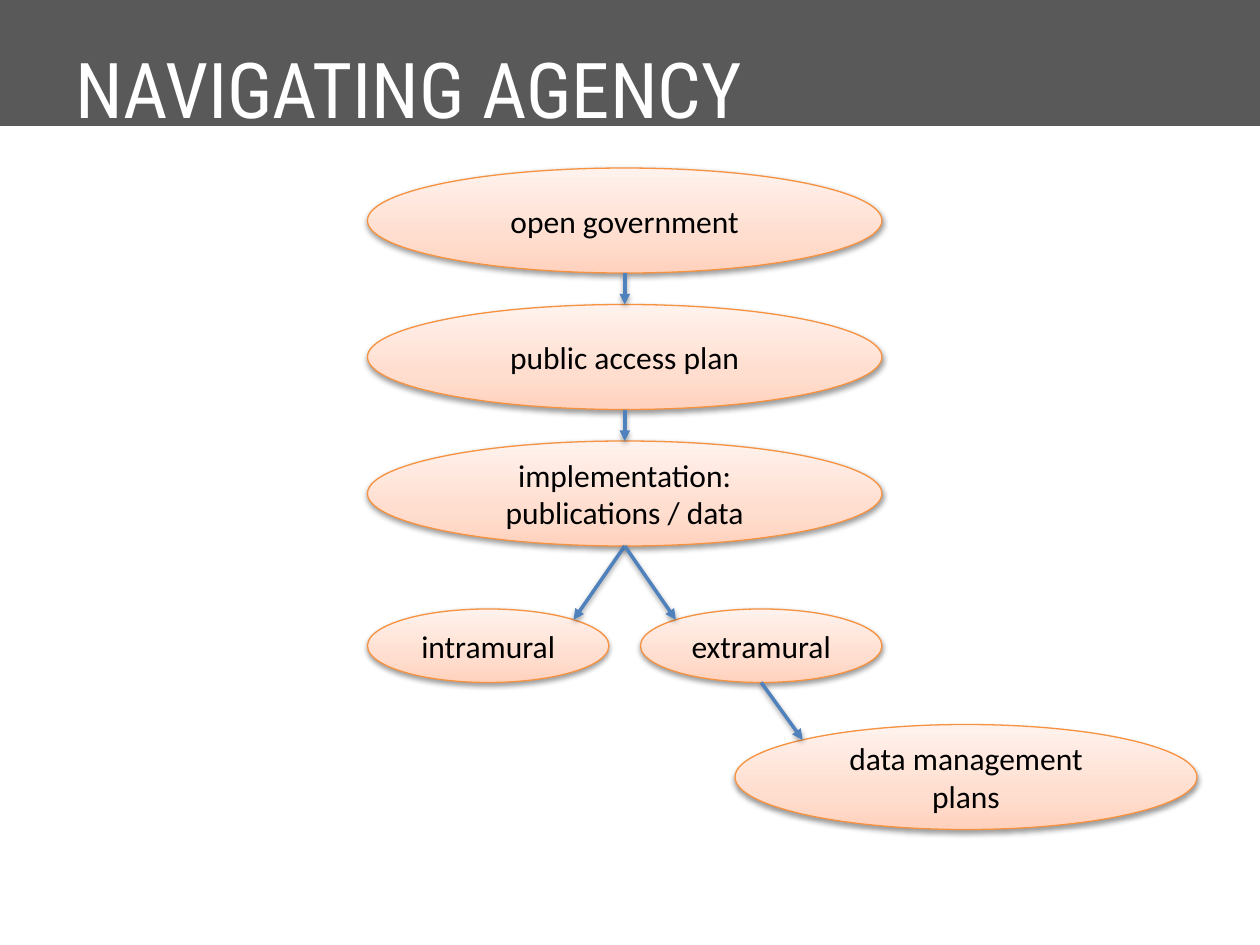
from copy import deepcopy
from math import sqrt

from pptx import Presentation
from pptx.dml.color import RGBColor
from pptx.enum.shapes import MSO_CONNECTOR as Link, MSO_SHAPE as Kind
from pptx.enum.text import MSO_ANCHOR as Anchor, MSO_AUTO_SIZE as Fit, PP_ALIGN as Align
from pptx.oxml import parse_xml
from pptx.oxml.ns import nsdecls
from pptx.util import Inches, Pt

UNIT = Inches(1) // 12  # grid of 120 columns by 90 rows
SHADE = (
    f'<a:effectLst {nsdecls("a")}><a:outerShdw blurRad="{Pt(3.1)}" dist="{Pt(1.6)}" '
    'dir="5400000" rotWithShape="0"><a:srgbClr val="000000">'
    '<a:alpha val="38000"/></a:srgbClr></a:outerShdw></a:effectLst>'
)


def color(code):
    return RGBColor.from_string(code)


def grid(*cells):
    return [round(cell * UNIT) for cell in cells]


class Chart:
    band, edge, arrow = "595959", "F69240", "4F81BD"
    blend = ((0, "FFD2BD"), (0.35, "FFDED0"), (1, "FFF2ED"))

    def __init__(self, deck):
        self.slide = deck.slides.add_slide(deck.slide_layouts[5])
        self.shapes = self.slide.shapes

    def font(self, para, name, size, code):
        para.font.name, para.font.size = name, Pt(size)
        para.font.color.rgb = color(code)

    def header(self, text):
        bar = self.shapes.add_shape(Kind.RECTANGLE, *grid(0, 0, 120, 12))
        bar.shadow.inherit = False
        bar.fill.solid()
        bar.fill.fore_color.rgb = color(self.band)
        bar.line.fill.background()

        title = self.shapes.title
        bar._element.addnext(title._element)  # title in front of the band
        title.left, title.top, title.width, title.height = grid(6, 3.36, 108, 9.84)
        frame = title.text_frame
        frame.text = text
        frame.word_wrap, frame.auto_size = True, Fit.NONE
        frame.vertical_anchor = Anchor.TOP
        para = frame.paragraphs[0]
        para.alignment = Align.LEFT
        self.font(para, "Roboto Condensed", 44, "FFFFFF")

    def oval(self, text, *box):
        oval = self.shapes.add_shape(Kind.OVAL, *grid(*box))
        oval.fill.gradient()
        oval.fill.gradient_angle = 90
        last = oval._element.spPr.xpath(".//a:gs")[-1]
        last.addnext(deepcopy(last))
        for stop, (place, code) in zip(oval.fill.gradient_stops, self.blend):
            stop.position, stop.color.rgb = place, color(code)
        oval.line.color.rgb, oval.line.width = color(self.edge), Pt(0.75)
        oval._element.spPr.append(parse_xml(SHADE))

        frame = oval.text_frame
        frame.text, frame.word_wrap = text, True
        frame.vertical_anchor = Anchor.MIDDLE
        for para in frame.paragraphs:
            para.alignment = Align.CENTER
            self.font(para, "Calibri", 18, "000000")
        return oval

    def join(self, start, end, side=0):
        """Arrow from the foot of one oval to the top (0), or upper left (-1) or right (1), of the next."""
        x = end.left + end.width // 2
        y = end.top
        if side:
            x += round(side * end.width / sqrt(8))
            y += round(end.height * (0.5 - 1 / sqrt(8)))
        foot = start.left + start.width // 2, start.top + start.height
        line = self.shapes.add_connector(Link.STRAIGHT, *foot, x, y)
        if not side:
            line.end_connect(end, 0)
        line.line.color.rgb, line.line.width = color(self.arrow), Pt(2)
        line.line._get_or_add_ln().append(
            parse_xml(f'<a:tailEnd {nsdecls("a")} type="triangle"/>'))
        line._element.spPr.append(parse_xml(SHADE))


def main():
    deck = Presentation()
    deck.slide_width, deck.slide_height = Inches(10), Inches(7.5)
    chart = Chart(deck)
    chart.header("NAVIGATING AGENCY REQUIREMENTS")

    # Main steps, evenly spaced
    names = ("open government", "public access plan",
             "implementation:\npublications / data")
    steps = [chart.oval(name, 35, 16 + 13 * row, 49, 10)
             for row, name in enumerate(names)]

    # Branches
    inner, outer = [chart.oval(name, 35 + 26 * col, 58, 23, 7)
                    for col, name in enumerate(("intramural", "extramural"))]
    plans = chart.oval("data management plans", 70, 69, 44, 10)

    # Arrows
    for start, end in zip(steps, steps[1:]):
        chart.join(start, end)
    chart.join(steps[-1], inner, 1)
    chart.join(steps[-1], outer, -1)
    chart.join(outer, plans, -1)

    deck.save("out.pptx")


if __name__ == "__main__":
    main()
